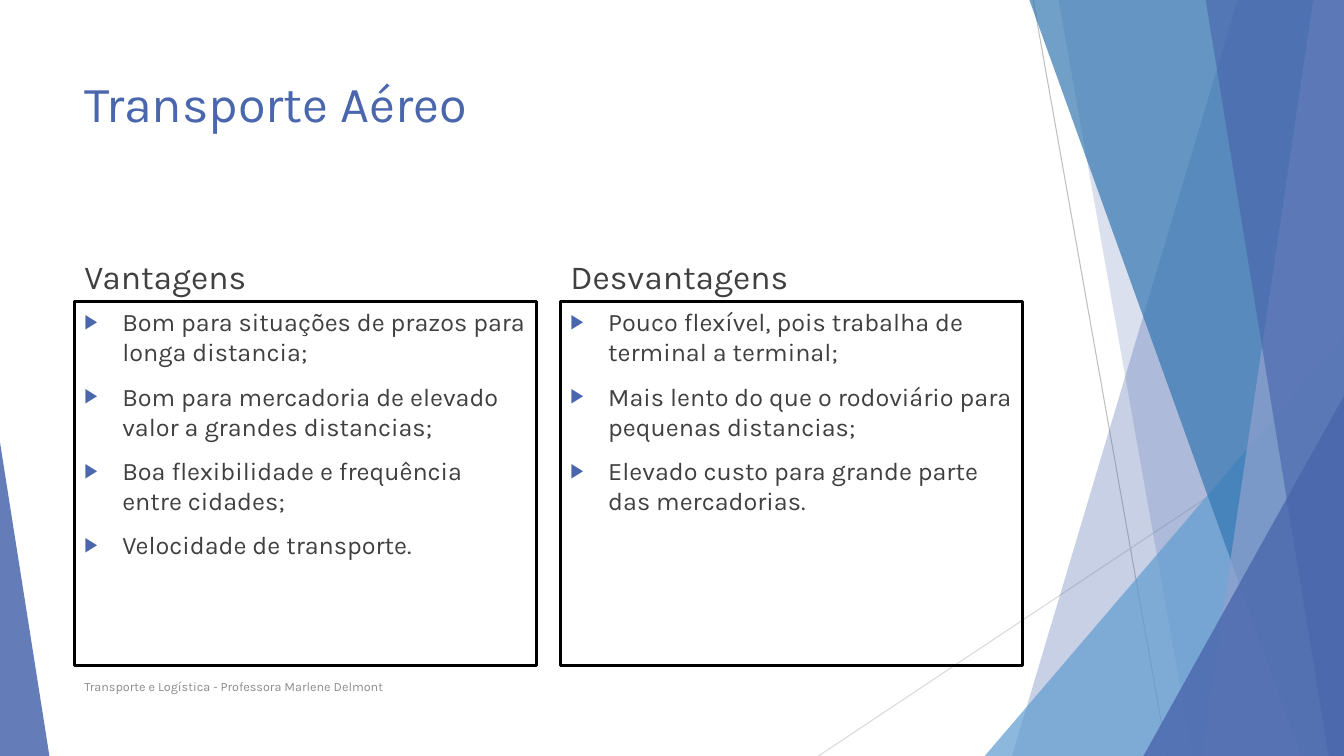
from lxml import etree
from pptx import Presentation
from pptx.dml.color import RGBColor
from pptx.enum.shapes import MSO_CONNECTOR as CONNECTOR, MSO_SHAPE as SHAPE
from pptx.enum.text import MSO_ANCHOR as ANCHOR
from pptx.oxml.ns import qn
from pptx.util import Pt

WIDTH, HEIGHT = 960, 540
BLUE, DARK, GREY = "4A66AC", "404040", "8C8C8C"
FONT = "Karla"

# Left edge at the top, left edge at the bottom, colour, opacity in percent
BACK_BANDS = [(884.2, 722.9, BLUE, 30), (756, 851.8, BLUE, 20)]
FRONT_BANDS = [
    (735.1, 929.5, "3477B2", 70),
    (938.2, 858.2, "90A2CF", 70),
    (861.1, 949, BLUE, 65),
]

COLUMNS = [
    ("Vantagens", [
        "Bom para situações de prazos para longa distancia;",
        "Bom para mercadoria de elevado valor a grandes distancias;",
        "Boa flexibilidade e frequência entre cidades;",
        "Velocidade de transporte.",
    ]),
    ("Desvantagens", [
        "Pouco flexível, pois trabalha de terminal a terminal;",
        "Mais lento do que o rodoviário para pequenas distancias;",
        "Elevado custo para grande parte das mercadorias.",
    ]),
]
MARGIN, COLUMN_WIDTH, COLUMN_STEP = 53.3, 330, 347.1


def color(value):
    return RGBColor.from_string(value)


def paint(shape, fill, opacity):
    """Give a shape a see-through fill without outline or shadow."""
    shape.shadow.inherit = False
    shape.line.fill.background()
    shape.fill.solid()
    shape.fill.fore_color.rgb = color(fill)
    tint = shape._element.spPr.find(qn("a:solidFill"))[0]
    etree.SubElement(tint, qn("a:alpha"), val=str(opacity * 1000))


def add_line(slide, start, end, stroke):
    line = slide.shapes.add_connector(
        CONNECTOR.STRAIGHT, *[Pt(value) for value in start + end])
    line.line.color.rgb = color(stroke)
    line.line.width = Pt(0.75)
    etree.SubElement(line._element.spPr, qn("a:effectLst"))


def add_band(slide, top_left, bottom_left, fill, opacity):
    """A full-height panel that ends at the right slide edge."""
    builder = slide.shapes.build_freeform(Pt(top_left), Pt(-0.6))
    corners = [(WIDTH, -0.6), (WIDTH, HEIGHT), (bottom_left, HEIGHT)]
    builder.add_line_segments([(Pt(x), Pt(y)) for x, y in corners], close=True)
    paint(builder.convert_to_shape(), fill, opacity)


def add_triangle(slide, left, top, width, apex, fill, opacity):
    """A triangle that stands on the bottom slide edge."""
    shape = slide.shapes.add_shape(
        SHAPE.ISOSCELES_TRIANGLE, Pt(left), Pt(top), Pt(width), Pt(HEIGHT - top))
    shape.adjustments[0] = apex
    paint(shape, fill, opacity)


def add_bullet(paragraph):
    properties = paragraph._p.get_or_add_pPr()
    indent = Pt(27)
    properties.set("marL", str(indent))
    properties.set("indent", str(-indent))
    bullet_color = etree.SubElement(properties, qn("a:buClr"))
    etree.SubElement(bullet_color, qn("a:srgbClr"), val=BLUE)
    etree.SubElement(properties, qn("a:buSzPct"), val="80000")
    etree.SubElement(properties, qn("a:buFont"), typeface="Arial")
    etree.SubElement(properties, qn("a:buChar"), char="▶")


def add_text(slide, box, lines, size, fill, anchor=ANCHOR.TOP, before=0, bullets=False):
    shape = slide.shapes.add_textbox(*[Pt(value) for value in box])
    frame = shape.text_frame
    frame.word_wrap = True
    frame.vertical_anchor = anchor
    font_format = {"name": FONT, "size": Pt(size)}
    for index, line in enumerate(lines):
        paragraph = frame.paragraphs[0] if index == 0 else frame.add_paragraph()
        paragraph.space_before = Pt(before)
        if bullets:
            add_bullet(paragraph)
        run = paragraph.add_run()
        run.text = line
        for name, value in font_format.items():
            setattr(run.font, name, value)
        run.font.color.rgb = color(fill)
    return shape


def add_column(slide, left, heading, items):
    add_text(slide, (left, 169.9, COLUMN_WIDTH, 45.4), [heading], 24, DARK,
             ANCHOR.BOTTOM, before=10)
    panel = add_text(slide, (left, 215.3, COLUMN_WIDTH, 260), items, 18, DARK,
                     before=10, bullets=True)
    panel.line.color.rgb = color("000000")
    panel.line.width = Pt(2.25)


def add_decoration(slide):
    add_line(slide, (738, 0), (833.8, HEIGHT), "BFBFBF")
    add_line(slide, (WIDTH, 290.2), (584.6, HEIGHT), "D9D9D9")
    for band in BACK_BANDS:
        add_band(slide, *band)
    add_triangle(slide, 703.4, 240, 256.6, 1, "629DD1", 72)
    for band in FRONT_BANDS:
        add_band(slide, *band)
    add_triangle(slide, 816.7, 282.8, 143.3, 1, BLUE, 80)
    add_triangle(slide, 0, 316, 35.3, 0, BLUE, 85)


def main():
    presentation = Presentation()
    presentation.slide_width, presentation.slide_height = Pt(WIDTH), Pt(HEIGHT)
    slide = presentation.slides.add_slide(presentation.slide_layouts[6])

    # Background facets
    add_decoration(slide)

    # Title, two columns and footer
    add_text(slide, (MARGIN, 48, 677, 104), ["Transporte Aéreo"], 36, BLUE)
    for index, (heading, items) in enumerate(COLUMNS):
        add_column(slide, MARGIN + index * COLUMN_STEP, heading, items)
    add_text(slide, (MARGIN, 475.9, 496, 28.8),
             ["Transporte e Logística - Professora Marlene Delmont"], 9, GREY,
             ANCHOR.MIDDLE)

    presentation.save("out.pptx")


if __name__ == "__main__":
    main()
